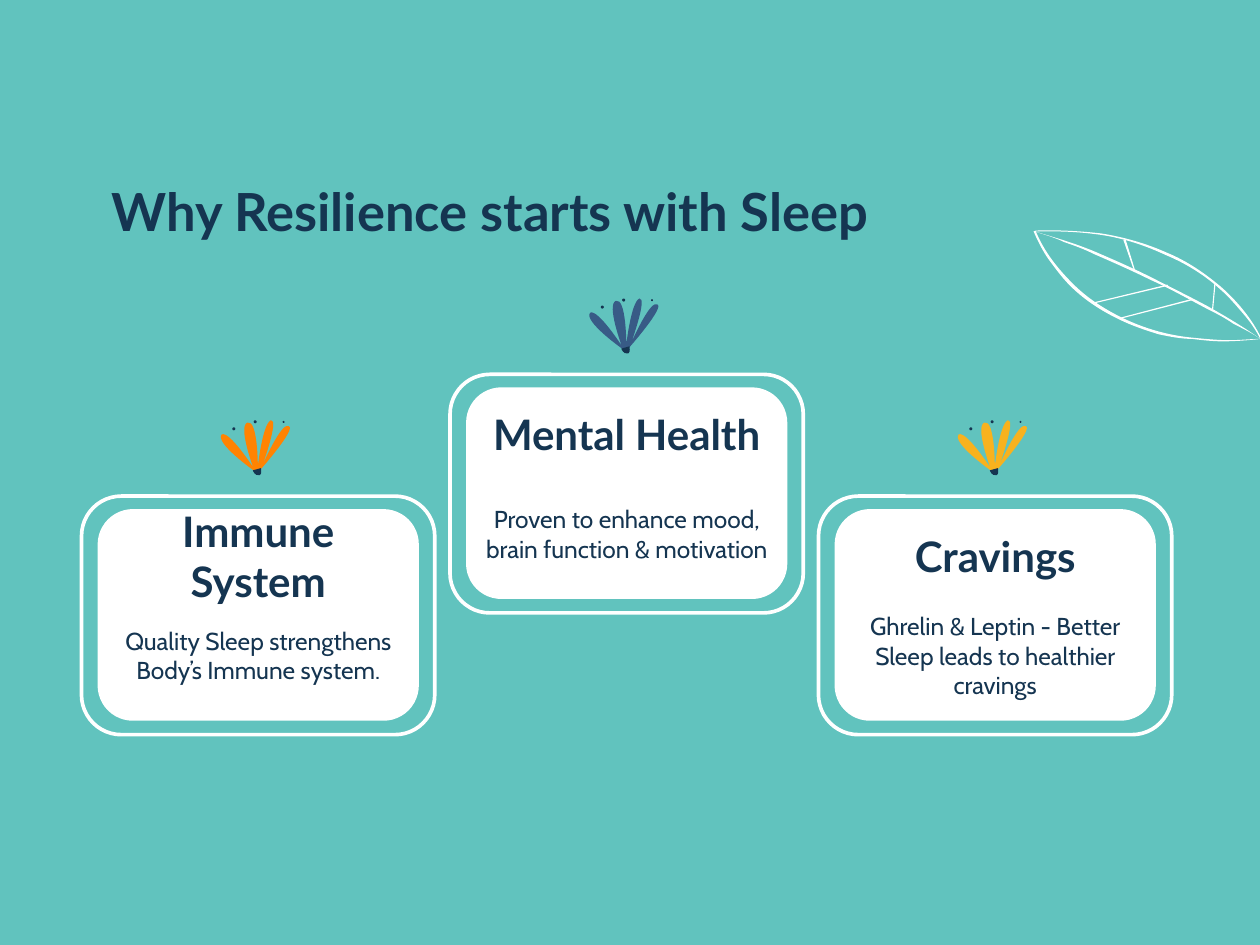
from dataclasses import dataclass
from math import cos, radians, sin

from pptx import Presentation
from pptx.dml.color import RGBColor
from pptx.enum.shapes import MSO_SHAPE
from pptx.enum.text import MSO_ANCHOR, MSO_AUTO_SIZE, PP_ALIGN
from pptx.oxml.ns import qn
from pptx.util import Pt


@dataclass(frozen=True)
class Theme:
    background: RGBColor = RGBColor.from_string("61C3BE")
    ink: RGBColor = RGBColor.from_string("153551")
    white: RGBColor = RGBColor.from_string("FFFFFF")
    orange: RGBColor = RGBColor.from_string("FF8302")
    blue: RGBColor = RGBColor.from_string("385B86")
    yellow: RGBColor = RGBColor.from_string("F8B21E")
    heading_font: str = "Lato"
    body_font: str = "Cabin"
    title_size: float = 32
    heading_size: float = 25.6
    body_size: float = 14.9


THEME = Theme()
INSET = 7.9
FRAME_WIDTH, FRAME_HEIGHT = 215.3, 145.4
FIRST_CARD_LEFT, CARD_STEP = 49.7, 224.6
LOW_CARD_TOP, HIGH_CARD_TOP = 302.4, 228.2
FLOWER_TILT = -22.1

CARDS = [
    ("Immune System", "Quality Sleep strengthens Body’s Immune system.", LOW_CARD_TOP, THEME.orange),
    ("Mental Health", "Proven to enhance mood, brain function & motivation", HIGH_CARD_TOP, THEME.blue),
    ("Cravings", "Ghrelin & Leptin - Better Sleep leads to healthier cravings", LOW_CARD_TOP, THEME.yellow),
]

LEAF_ORIGIN = (630, 140.4)
LEAF_INNER_EDGE = [
    (12.2, 0.7), (8.6, 0.7), (5, 0.7), (1.4, 0.7),
    (6.5, 13), (14.4, 23), (23.8, 32.4), (33.1, 41.8), (44.6, 49), (56.9, 54.7),
    (69.8, 60.5), (82.8, 64.1), (97.2, 65.5), (104.4, 66.2), (112.3, 67), (119.5, 67),
    (126, 67), (132.5, 66.2), (138.2, 66.2), (135.4, 60.5), (131.8, 55.4), (127.4, 50.4),
    (123.1, 45.4), (118.8, 40.3), (113.8, 36), (104.4, 27.4), (92.9, 20.2), (80.6, 15.1),
    (68.4, 9.4), (55.4, 5), (41.8, 2.9), (31.7, 1.4), (21.6, 0.7), (12.2, 0.7),
]
LEAF_OUTER_EDGE = [
    (8.6, 0), (19.4, 0), (31, 0.7), (41.8, 2),
    (55.4, 4.3), (68.4, 7.9), (81.4, 13.7), (93.6, 18.7), (105.1, 26.6), (115.2, 35.3),
    (124.6, 43.9), (133.2, 54), (139, 66.2), (131, 67), (123.1, 67.7), (115.2, 67.7),
    (109.4, 67.7), (103, 67), (96.5, 66.2), (90, 66.2), (82.8, 64.8), (76.3, 63.4),
    (69.1, 61.2), (62.6, 59), (56.2, 56.2), (43.2, 50.4), (31.7, 43.2), (22.3, 33.8),
    (17.3, 28.8), (13.7, 23.8), (9.4, 18), (5.8, 13), (2.9, 7.2), (0, 0.7),
    (0, 0), (5.8, 0), (8.6, 0),
]
LEAF_MIDRIB = [
    (0.7, 0.7), (13, 4.3), (25.2, 7.9), (37.4, 13),
    (49, 18), (60.5, 23), (72, 28.8), (83.5, 34.6), (95, 40.3), (105.8, 46.1),
    (117.4, 52.6), (128.2, 59), (138.2, 66.2), (133.2, 62.6), (127.4, 59.8), (121.7, 56.9),
    (116.6, 53.3), (110.9, 50.4), (105.1, 47.5), (94.3, 41.8), (82.8, 35.3), (71.3, 30.2),
    (59.8, 24.5), (48.2, 19.4), (36.7, 14.4), (31, 11.5), (25.2, 9.4), (18.7, 7.2),
    (13, 4.3), (7.2, 2.9), (0.7, 0.7),
]
LEAF_VEINS = [
    [(110.2, 32.4), (110.9, 32.4), (109.4, 49), (108.7, 49)],
    [(96.5, 41.8), (97.2, 42.5), (52.6, 54), (52.6, 53.3)],
    [(81.4, 33.1), (82.1, 33.8), (36.7, 44.6), (36.7, 43.9)],
    [(56.2, 5.8), (61.9, 24.5), (61.2, 24.5), (54.7, 5.8)],
]

PETALS = [
    (-6.8, -13.7), (-12.6, -11.5), (-3.2, 13.7), (-3.2, 13.7),
    (-3.2, 13.7), (-17.6, -8.6), (-22.4, -6.5), (-27, -1.4), (-2.5, 15.8), (-2.5, 15.8),
    (-2.5, 15.8), (1.1, 15.1), (1.1, 15.1), (1.1, 15.1), (23.4, -10.1), (18.4, -11.5),
    (18.4, -11.5), (16.9, -11.5), (16.9, -11.5), (11.9, -9.4), (2.5, 12.2), (2.5, 12.2),
    (2.5, 12.2), (12.6, -15.8), (7.6, -15.1), (2.5, -13), (-0.4, 13), (-0.4, 13),
    (-0.4, 13), (-0.4, -15.8), (-6.8, -13.7),
]
STEM = [
    (-3.2, 15.8), (-3.2, 15.8), (-1.8, 19.4), (0.4, 18.7),
    (0.4, 18.7), (1.1, 18.7), (1.1, 18.7), (2.5, 18), (1.8, 14.4), (1.8, 14.4),
]
STEM_CENTER = (0.4, 16.6)
POLLEN = [(-14.8, -9.7, 1.8), (-1.8, -14, 1.8), (15.5, -13.9, 1.2)]


def turn(points, degrees, pivot):
    c, s = cos(radians(degrees)), sin(radians(degrees))
    px, py = pivot
    return [(px + (x - px) * c - (y - py) * s, py + (x - px) * s + (y - py) * c) for x, y in points]


def paint(shape, color):
    shape.shadow.inherit = False
    shape.fill.solid()
    shape.fill.fore_color.rgb = color
    shape.line.fill.background()


def bend(outline):
    segments = list(outline._element.iter(qn("a:lnTo")))
    for first, second, third in zip(segments[::3], segments[1::3], segments[2::3]):
        first.tag = qn("a:cubicBezTo")
        for follower in (second, third):
            first.append(follower[0])
            follower.getparent().remove(follower)


def add_outline(shapes, origin, contours, color, curved=True):
    placed = [[(Pt(origin[0] + x), Pt(origin[1] + y)) for x, y in contour] for contour in contours]
    builder = shapes.build_freeform(*placed[0][0], scale=1.0)
    builder.add_line_segments(placed[0][1:])
    for contour in placed[1:]:
        builder.move_to(*contour[0])
        builder.add_line_segments(contour[1:])
    outline = builder.convert_to_shape()
    if curved:
        bend(outline)
    paint(outline, color)
    return outline


def add_leaf(slide):
    leaf = slide.shapes.add_group_shape().shapes
    add_outline(leaf, LEAF_ORIGIN, [LEAF_INNER_EDGE, LEAF_OUTER_EDGE], THEME.white)
    add_outline(leaf, LEAF_ORIGIN, [LEAF_MIDRIB], THEME.white)
    for vein in LEAF_VEINS:
        add_outline(leaf, LEAF_ORIGIN, [vein + vein[:1]], THEME.white, curved=False)


def add_flower(slide, center, color):
    flower = slide.shapes.add_group_shape().shapes
    for knots, pivot, fill in [(PETALS, (0, 0), color), (STEM, STEM_CENTER, THEME.ink)]:
        upright = turn(knots, -FLOWER_TILT, pivot)
        add_outline(flower, center, [upright], fill).rotation = FLOWER_TILT
    for x, y, size in POLLEN:
        grain = flower.add_shape(MSO_SHAPE.OVAL, Pt(center[0] + x - size / 2),
                                 Pt(center[1] + y - size / 2), Pt(size), Pt(size))
        paint(grain, THEME.ink)


def add_panel(slide, left, top):
    panel = slide.shapes.add_group_shape().shapes
    frame = panel.add_shape(MSO_SHAPE.ROUNDED_RECTANGLE, Pt(left), Pt(top),
                            Pt(FRAME_WIDTH), Pt(FRAME_HEIGHT))
    frame.shadow.inherit = False
    frame.fill.background()
    frame.line.color.rgb = THEME.white
    frame.line.width = Pt(2.25)
    inside = panel.add_shape(MSO_SHAPE.ROUNDED_RECTANGLE, Pt(left + 9.8), Pt(top + 7.9),
                             Pt(195.8), Pt(129))
    paint(inside, THEME.white)


def write(box, text, font, size, bold, align, anchor, bottom=INSET):
    frame = box.text_frame
    frame.word_wrap = True
    frame.auto_size = MSO_AUTO_SIZE.NONE
    frame.vertical_anchor = anchor
    frame.margin_left = frame.margin_top = frame.margin_right = Pt(INSET)
    frame.margin_bottom = Pt(bottom)
    paragraph = frame.paragraphs[0]
    paragraph.text = text
    paragraph.alignment = align
    paragraph.font.name = font
    paragraph.font.size = Pt(size)
    paragraph.font.bold = bold
    paragraph.font.color.rgb = THEME.ink
    return paragraph


def add_card_text(slide, left, top, heading, detail):
    heading_box = slide.shapes.add_textbox(Pt(left + 13), Pt(top + 19), Pt(189.4), Pt(34.6))
    write(heading_box, heading, THEME.heading_font, THEME.heading_size, True,
          PP_ALIGN.CENTER, MSO_ANCHOR.MIDDLE)
    detail_box = slide.shapes.add_textbox(Pt(left + 13), Pt(top + 60.7), Pt(189.4), Pt(64.8))
    detail_line = write(detail_box, detail, THEME.body_font, THEME.body_size, False,
                        PP_ALIGN.CENTER, MSO_ANCHOR.MIDDLE, bottom=0)
    detail_line.space_after = Pt(17.1)


def set_title(slide, text):
    title = slide.shapes.title
    title.left, title.top, title.width, title.height = Pt(60), Pt(101), Pt(610.6), Pt(69.8)
    write(title, text, THEME.heading_font, THEME.title_size, True, PP_ALIGN.LEFT, MSO_ANCHOR.TOP)


def main():
    deck = Presentation()
    deck.slide_width, deck.slide_height = Pt(768), Pt(576)
    slide = deck.slides.add_slide(deck.slide_layouts[5])
    slide.background.fill.solid()
    slide.background.fill.fore_color.rgb = THEME.background
    set_title(slide, "Why Resilience starts with Sleep")
    add_leaf(slide)
    for column, (heading, detail, top, color) in enumerate(CARDS):
        left = FIRST_CARD_LEFT + column * CARD_STEP
        add_panel(slide, left, top)
        add_card_text(slide, left, top, heading, detail)
        add_flower(slide, (left + FRAME_WIDTH / 2, top - 31.3), color)
    deck.save("out.pptx")


if __name__ == "__main__":
    main()
